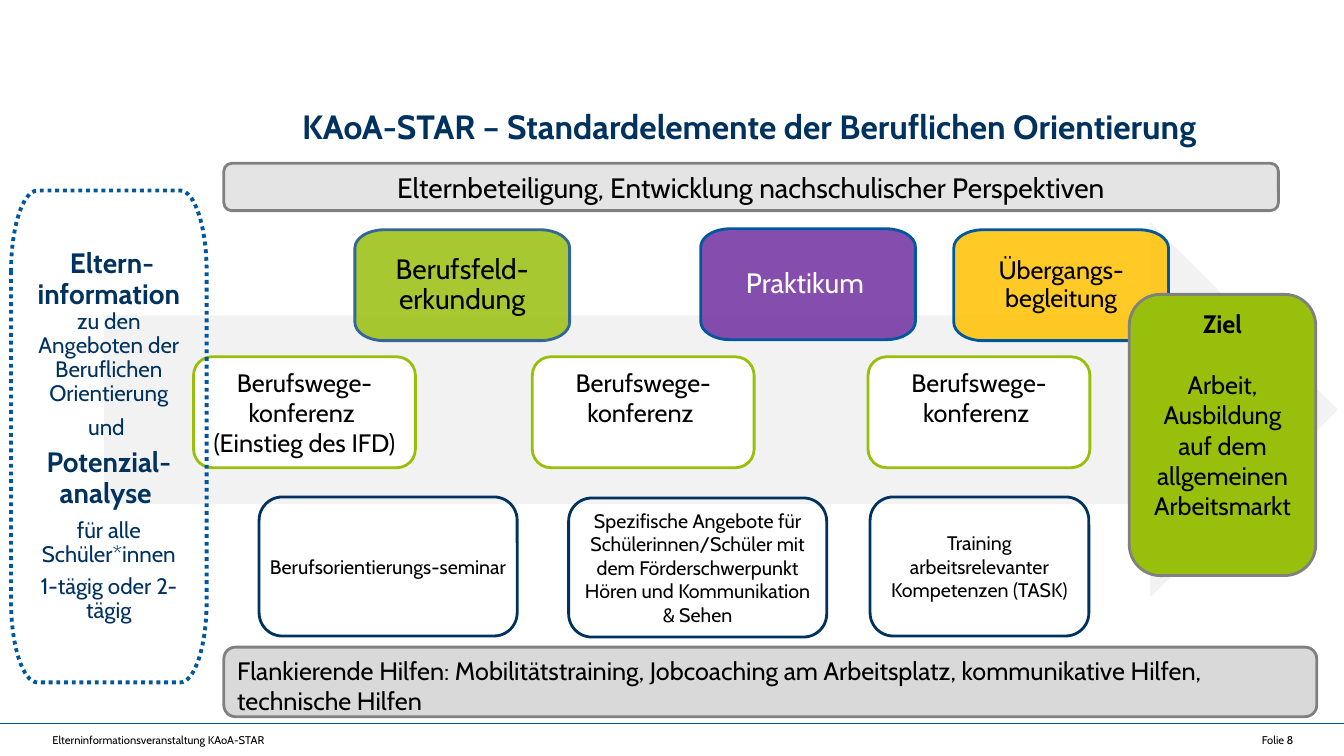
"""Builds the slide on the KAoA-STAR standard elements of career orientation."""
from dataclasses import dataclass

from lxml import etree
from pptx import Presentation
from pptx.dml.color import RGBColor
from pptx.enum.dml import MSO_LINE_DASH_STYLE as Dash
from pptx.enum.shapes import MSO_CONNECTOR as Connector, MSO_SHAPE as Shape
from pptx.enum.text import MSO_ANCHOR as Anchor, PP_ALIGN as Align
from pptx.oxml.ns import qn
from pptx.util import Inches, Pt


@dataclass(frozen=True)
class Theme:
    font: str = "Cabin"
    black: str = "000000"
    white: str = "FFFFFF"
    navy: str = "00325F"
    blue: str = "00579D"
    steel: str = "336699"
    green: str = "98BF0C"
    purple: str = "7030A0"
    amber: str = "FFC000"
    gray: str = "808080"
    silver: str = "D9D9D9"
    pale: str = "F2F2F2"
    tiny: int = 8
    small: int = 14
    medium: int = 16
    body: int = 18
    large: int = 20
    title: int = 24
    outline: float = 2


THEME = Theme()

TITLE = "KAoA-STAR – Standardelemente der Beruflichen Orientierung"
PARENTS = "Elternbeteiligung, Entwicklung nachschulischer Perspektiven"
SUPPORT = ("Flankierende Hilfen: Mobilitätstraining, Jobcoaching am Arbeitsplatz, "
           "kommunikative Hilfen, technische Hilfen")
FOOTER = "Elterninformationsveranstaltung KAoA-STAR"
PAGE_LABEL = "Folie 8"
PHASES = [
    ("Berufsfeld-erkundung", 3.52, 2.28, THEME.green, THEME.steel, THEME.large, THEME.black),
    ("Praktikum ", 6.95, 2.27, THEME.purple, THEME.blue, THEME.large, THEME.white),
    ("Übergangs-begleitung", 9.46, 2.28, THEME.amber, THEME.blue, THEME.body, THEME.black),
]
CONFERENCES = [
    (1.92, ["Berufswege-konferenz ", "(Einstieg des IFD)"]),
    (5.28, ["Berufswege-konferenz "]),
    (8.61, ["Berufswege-konferenz "]),
]
OFFERS = [
    (2.57, 4.93, 2.56, "Berufsorientierungs-seminar "),
    (5.64, 4.94, 2.56, "Spezifische Angebote für Schülerinnen/Schüler mit dem "
                       "Förderschwerpunkt Hören und Kommunikation & Sehen"),
    (8.63, 4.93, 2.17, "Training arbeitsrelevanter Kompetenzen (TASK)"),
]
START = [
    [(" ", THEME.large, False), ("Eltern-information ", THEME.large, True),
     ("zu den Angeboten der Beruflichen Orientierung", THEME.medium, False)],
    [("und ", THEME.medium, False)],
    [("Potenzial-analyse ", THEME.large, True)],
    [("für alle Schüler*innen", THEME.medium, False)],
    [("1-tägig oder 2-tägig", THEME.medium, False)],
]
GOAL = [
    [("Ziel", THEME.body, True)],
    [("Arbeit, Ausbildung auf dem allgemeinen Arbeitsmarkt", THEME.body, False)],
]


def plain(size, *texts):
    return [[(text, size, False)] for text in texts]


def style(shape, fill=None, line=None, width=THEME.outline, opacity=None):
    shape.shadow.inherit = False
    if fill:
        shape.fill.solid()
        shape.fill.fore_color.rgb = RGBColor.from_string(fill)
        if opacity:
            color = shape.fill._xPr.find(qn("a:solidFill"))[0]
            etree.SubElement(color, qn("a:alpha"), val=str(opacity * 1000))
    else:
        shape.fill.background()
    shape.line.color.rgb = RGBColor.from_string(line)
    shape.line.width = Pt(width)


def write(shape, paragraphs, color=THEME.black, align=Align.CENTER,
          anchor=Anchor.TOP, inset=None, wrap=True, tight=False):
    frame = shape.text_frame
    frame.word_wrap = wrap
    frame.vertical_anchor = anchor
    if inset is not None:
        frame.margin_left = frame.margin_right = Inches(inset)
        frame.margin_top = frame.margin_bottom = Inches(inset)
    for index, spans in enumerate(paragraphs):
        para = frame.add_paragraph() if index else frame.paragraphs[0]
        para.alignment = align
        if tight:
            para.line_spacing = 0.9
            para.space_after = Pt(0.35 * max(size for _, size, _ in spans))
        for text, size, bold in spans:
            span = para.add_run()
            span.text = text
            span.font.name = THEME.font
            span.font.size = Pt(size)
            span.font.bold = bold
            span.font.color.rgb = RGBColor.from_string(color)
    return frame


def add_preset(page, kind, area, **look):
    shape = page.shapes.add_shape(kind, *map(Inches, area))
    style(shape, **look)
    return shape


def round_corners(shape):
    steps = list(shape._element.iter(qn("a:moveTo"), qn("a:lnTo")))
    points = [(int(step[0].get("x")), int(step[0].get("y"))) for step in steps]
    for index in range(1, len(steps), 2):
        first, last = points[index - 1], points[index]
        corner = (first[0], last[1]) if index % 4 == 1 else (last[0], first[1])
        pulls = [tuple(round(end + 0.55 * (tip - end)) for end, tip in zip(point, corner))
                 for point in (first, last)]
        curve = etree.Element(qn("a:cubicBezTo"))
        for x, y in [*pulls, last]:
            etree.SubElement(curve, qn("a:pt"), x=str(x), y=str(y))
        steps[index].getparent().replace(steps[index], curve)


def add_pillow(page, area, **look):
    left, top, width, height = area
    right, bottom = left + width, top + height
    across, down = width * 0.135, height * 0.165
    points = [
        (left, top + down), (left + across, top),
        (right - across, top), (right, top + down),
        (right, bottom - down), (right - across, bottom),
        (left + across, bottom), (left, bottom - down),
    ]
    points = [(Inches(x), Inches(y)) for x, y in points]
    builder = page.shapes.build_freeform(*points[0])
    builder.add_line_segments(points[1:], close=True)
    shape = builder.convert_to_shape()
    round_corners(shape)
    style(shape, **look)
    return shape


def add_label(page, area, paragraphs, **layout):
    return write(page.shapes.add_textbox(*map(Inches, area)), paragraphs, **layout)


def add_footer(page):
    rule = page.shapes.add_connector(
        Connector.STRAIGHT, 0, Inches(7.18), Inches(13.33), Inches(7.18))
    rule.line.color.rgb = RGBColor.from_string(THEME.blue)
    rule.line.width = Pt(0.57)
    etree.SubElement(rule._element.spPr, qn("a:effectLst"))
    for left, width, text, align in [(0.52, 8.13, FOOTER, Align.LEFT),
                                     (9.51, 3.32, PAGE_LABEL, Align.RIGHT)]:
        add_label(page, (left, 7.18, width, 0.32), plain(THEME.tiny, text),
                  align=align, anchor=Anchor.MIDDLE, inset=0)


def main():
    deck = Presentation()
    deck.slide_width, deck.slide_height = Inches(13.33), Inches(7.5)
    page = deck.slides.add_slide(deck.slide_layouts[6])
    add_footer(page)

    support = add_preset(page, Shape.ROUNDED_RECTANGLE, (2.22, 6.42, 10.84, 0.69),
                         fill=THEME.silver, line=THEME.gray)
    write(support, plain(THEME.body, SUPPORT), align=Align.LEFT)
    add_preset(page, Shape.RIGHT_ARROW, (1.01, 2.15, 12.29, 3.83),
               fill=THEME.pale, line=THEME.white, width=3)

    for text, left, top, fill, line, size, color in PHASES:
        phase = add_pillow(page, (left, top, 2.13, 1.1), fill=fill, line=line, opacity=85)
        write(phase, plain(size, text), color=color, anchor=Anchor.MIDDLE,
              inset=0.18, tight=True)

    parents = add_preset(page, Shape.ROUNDED_RECTANGLE, (2.22, 1.62, 10.46, 0.47),
                         fill=THEME.silver, line=THEME.gray, opacity=70)
    write(parents, plain(THEME.large, PARENTS), anchor=Anchor.MIDDLE)

    for left, top, width, text in OFFERS:
        offer = add_preset(page, Shape.ROUNDED_RECTANGLE, (left, top, width, 1.38),
                           line=THEME.navy)
        write(offer, plain(THEME.small, text), anchor=Anchor.MIDDLE, inset=0.04)

    for left, texts in CONFERENCES:
        conference = add_preset(page, Shape.ROUNDED_RECTANGLE, (left, 3.54, 2.2, 1.1),
                                fill=THEME.white, line=THEME.green)
        write(conference, plain(THEME.body, *texts))

    start = add_pillow(page, (0.11, 1.89, 1.94, 4.88), line=THEME.blue, width=2.75)
    start.line.dash_style = Dash.ROUND_DOT
    write(start, START, color=THEME.navy, anchor=Anchor.MIDDLE, inset=0.18, tight=True)

    goal = add_preset(page, Shape.ROUNDED_RECTANGLE, (11.2, 2.92, 1.85, 2.79),
                      fill=THEME.green, line=THEME.gray)
    write(goal, GOAL).paragraphs[1].space_before = Pt(22)

    add_label(page, (2.46, 1, 9.94, 0.5), [[(TITLE, THEME.title, True)]],
              color=THEME.navy, wrap=False)
    deck.save("out.pptx")


if __name__ == "__main__":
    main()
